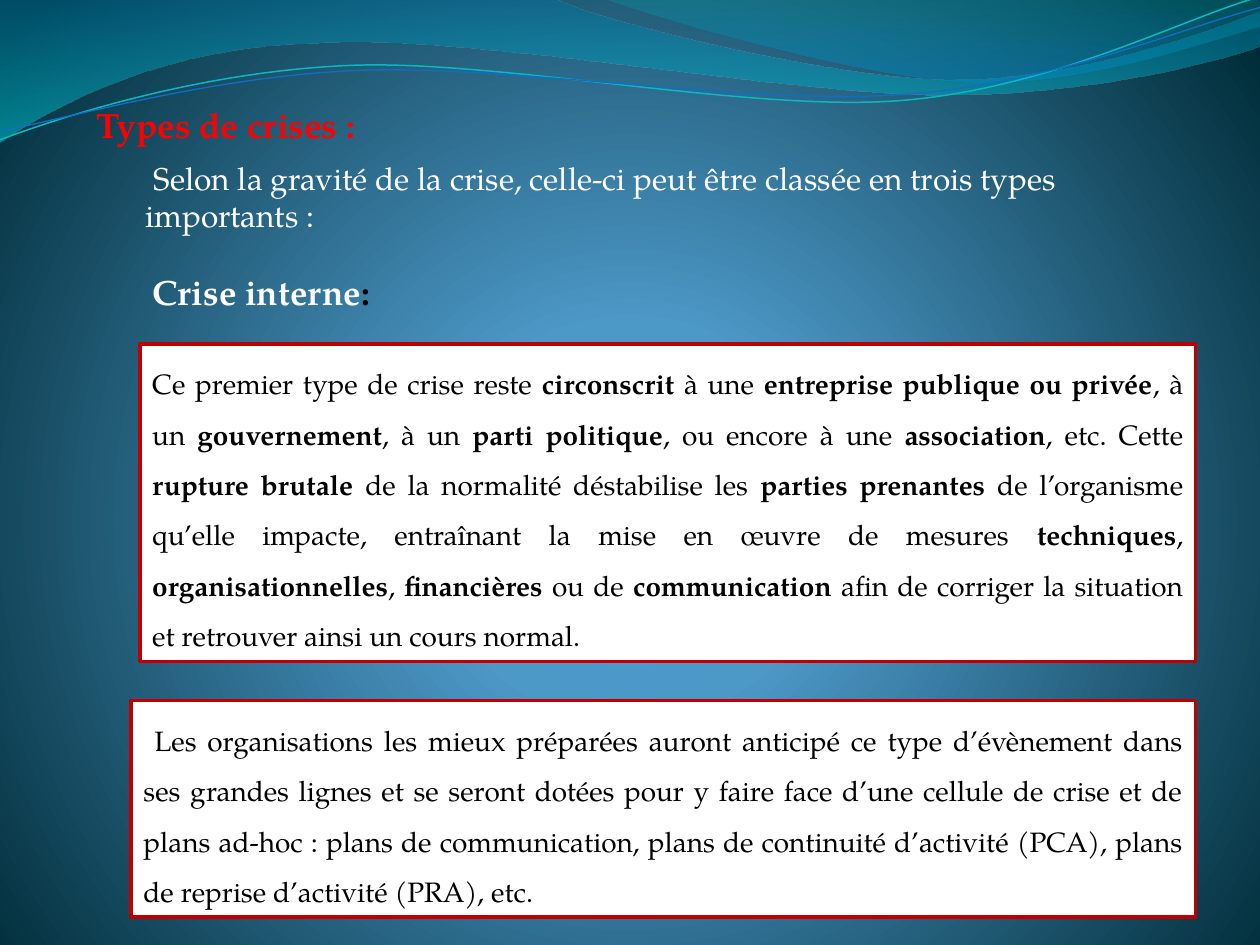
from dataclasses import dataclass
from typing import Optional

from lxml import etree
from pptx import Presentation
from pptx.dml.color import RGBColor
from pptx.enum.shapes import MSO_SHAPE
from pptx.enum.text import MSO_ANCHOR, MSO_AUTO_SIZE, PP_ALIGN
from pptx.oxml.ns import qn
from pptx.util import Inches, Pt

RECTANGLE = MSO_SHAPE.RECTANGLE
TOP = MSO_ANCHOR.TOP
JUSTIFY = PP_ALIGN.JUSTIFY
LEFT = PP_ALIGN.LEFT
GROW = MSO_AUTO_SIZE.SHAPE_TO_FIT_TEXT
FONT = "TeX Gyre Pagella"
WHITE = RGBColor(0xFF, 0xFF, 0xFF)
BLACK = RGBColor(0, 0, 0)
RED = RGBColor(0xFF, 0, 0)
DARK_RED = RGBColor(0xC0, 0, 0)
TURQUOISE = RGBColor(0x0A, 0xB8, 0xBF)
BLUE = RGBColor(0x0F, 0x6F, 0xC6)
SKY = RGBColor(0x4A, 0xA0, 0xD6)
STEEL = RGBColor(0x4C, 0x98, 0xC7)
NIGHT = RGBColor(0x00, 0x2C, 0x38)
OCEAN = RGBColor(0x00, 0x74, 0xA1)
AQUA = RGBColor(0x00, 0xC6, 0xCF)
TEAL = RGBColor(0x00, 0xA1, 0xA9)
AZURE = RGBColor(0x00, 0x8B, 0xBF)


@dataclass(frozen=True)
class Stop:
    position: int
    color: RGBColor
    opacity: int = 100


@dataclass(frozen=True)
class Wave:
    """Segments hold two numbers for a straight line and six for a curve."""
    start: tuple
    segments: tuple
    stops: tuple = ()
    color: Optional[RGBColor] = None
    width: float = 0


@dataclass(frozen=True)
class Passage:
    """Text in which double asterisks switch bold on and off."""
    box: tuple
    text: str
    size: int
    color: RGBColor
    framed: bool = False
    ending: str = ""


WAVES = (
    Wave((0, 0), ((4.4, -0.01), (4.76, 0.17, 6.64, 0.63, 7.58, 0.63),
                  (8.53, 0.63, 9.58, 0.26, 10, 0.09), (10.01, 0.36),
                  (9.83, 0.44, 8.7, 0.76, 7.46, 0.75), (6.22, 0.75, 3.82, 0.28, 2.57, 0.34),
                  (1.29, 0.36, 0.46, 0.83, -0.01, 1.13), (0, 0)),
         stops=(Stop(0, OCEAN, 45), Stop(100, AQUA, 55))),
    Wave((4.79, -0.01), ((5.09, 0.11, 6.82, 0.62, 7.69, 0.65),
                         (8.56, 0.69, 9.61, 0.32, 10, 0.21), (10, 0), (4.79, -0.01)),
         stops=(Stop(0, TEAL, 30), Stop(80, AZURE, 45))),
    Wave((0, 1.11), ((0.48, 0.93, 1.58, 0.57, 2.77, 0.52), (3.95, 0.47, 5.93, 0.89, 7.13, 0.8),
                     (8.33, 0.71, 9.38, 0.15, 9.98, -0.02)), color=TURQUOISE, width=0.85),
    Wave((0, 1.04), ((0.47, 0.96, 1.64, 0.61, 2.83, 0.56), (4.03, 0.51, 5.97, 0.84, 7.17, 0.75),
                     (8.36, 0.67, 9.41, 0.21, 10, 0.06)), color=BLUE, width=0.75),
)

PASSAGES = (
    Passage((1.11, 2.73, 8.38, 2.52),
            "Ce premier type de crise reste **circonscrit **à une **entreprise publique ou privée**"
            ", à un **gouvernement**, à un **parti politique**, ou encore à une **association**"
            ", etc. Cette **rupture brutale **de la normalité déstabilise les **parties prenantes **"
            "de l’organisme qu’elle impacte, entraînant la mise en œuvre de mesures **techniques**"
            ", **organisationnelles**, **financières **ou de **communication **"
            "afin de corriger la situation et retrouver ainsi un cours normal. ",
            16, BLACK, framed=True),
    Passage((1.04, 2.1, 6.97, 0.44), " **Crise interne", 20, WHITE, ending=":"),
    Passage((0.67, 0.77, 4.2, 0.44), "**Types de crises :", 20, RED),
    Passage((1.06, 1.21, 8.27, 0.71),
            " Selon la gravité de la crise, celle-ci peut être classée en trois types importants :",
            18, WHITE),
    Passage((1.04, 5.56, 8.45, 1.72),
            " Les organisations les mieux préparées auront anticipé ce type d’évènement dans ses "
            "grandes lignes et se seront dotées pour y faire face d’une cellule de crise et de plans "
            "ad-hoc : plans de communication, plans de continuité d’activité (PCA), plans de reprise "
            "d’activité (PRA), etc. ", 16, BLACK, framed=True),
)


def set_gradient(owner, stops: tuple, radial: bool = False) -> None:
    """Rewrite the gradient fill found inside an XML element."""
    gradient = owner.find(".//" + qn("a:gradFill"))
    for child in list(gradient):
        gradient.remove(child)
    stop_list = etree.SubElement(gradient, qn("a:gsLst"))
    for stop in stops:
        mark = etree.SubElement(stop_list, qn("a:gs"), pos=str(stop.position * 1000))
        color = etree.SubElement(mark, qn("a:srgbClr"), val=str(stop.color))
        if stop.opacity < 100:
            etree.SubElement(color, qn("a:alpha"), val=str(stop.opacity * 1000))
    if radial:
        circle = etree.SubElement(gradient, qn("a:path"), path="circle")
        etree.SubElement(circle, qn("a:fillToRect"), l="10000", t="110000", r="10000", b="100000")
    else:
        etree.SubElement(gradient, qn("a:lin"), ang="5400000", scaled="1")


def bend(ribbon, segments: tuple) -> None:
    """Turn the straight steps of a freeform into Bézier curves where six numbers are given."""
    steps = list(ribbon.element.iter(qn("a:lnTo")))
    for step, segment in zip(steps, segments):
        if len(segment) == 2:
            continue
        curve = etree.Element(qn("a:cubicBezTo"))
        for x, y in zip(segment[::2], segment[1::2]):
            etree.SubElement(curve, qn("a:pt"), x=str(Inches(x) - ribbon.left),
                             y=str(Inches(y) - ribbon.top))
        step.getparent().replace(step, curve)


def draw_wave(slide, wave: Wave) -> None:
    """Draw a filled wave or an open wavy line."""
    builder = slide.shapes.build_freeform(*(Inches(length) for length in wave.start))
    ends = [(Inches(segment[-2]), Inches(segment[-1])) for segment in wave.segments]
    builder.add_line_segments(ends, close=bool(wave.stops))
    ribbon = builder.convert_to_shape()
    bend(ribbon, wave.segments)
    ribbon.shadow.inherit = False
    if wave.stops:
        ribbon.fill.gradient()
        set_gradient(ribbon.element.spPr, wave.stops)
        ribbon.line.fill.background()
    else:
        ribbon.fill.background()
        ribbon.line.color.rgb = wave.color
        ribbon.line.width = Pt(wave.width)


def add_run(paragraph, text: str, size: int, color: RGBColor, bold: bool) -> None:
    """Append a formatted run."""
    run = paragraph.add_run()
    run.text = text
    for name, value in {"name": FONT, "size": Pt(size), "bold": bold}.items():
        setattr(run.font, name, value)
    run.font.color.rgb = color


def draw_passage(slide, passage: Passage) -> None:
    """Draw a heading or a framed paragraph."""
    place = [Inches(length) for length in passage.box]
    if passage.framed:
        holder = slide.shapes.add_shape(RECTANGLE, *place)
        holder.shadow.inherit = False
        holder.fill.solid()
        holder.fill.fore_color.rgb = WHITE
        holder.line.color.rgb = DARK_RED
        holder.line.width = Pt(2)
    else:
        holder = slide.shapes.add_textbox(*place)
    frame_format = {"word_wrap": True, "auto_size": GROW, "vertical_anchor": TOP}
    for name, value in frame_format.items():
        setattr(holder.text_frame, name, value)
    paragraph = holder.text_frame.paragraphs[0]
    layout = {"alignment": JUSTIFY, "line_spacing": 1.5} if passage.framed else {"alignment": LEFT}
    for name, value in layout.items():
        setattr(paragraph, name, value)
    for index, part in enumerate(passage.text.split("**")):
        if part:
            add_run(paragraph, part, passage.size, passage.color, index % 2 == 1)
    if passage.ending:
        add_run(paragraph, passage.ending, passage.size, BLACK, True)


def main() -> None:
    """Build the slide on types of crises."""
    deck = Presentation()
    deck.slide_width, deck.slide_height = Inches(10), Inches(7.5)
    slide = deck.slides.add_slide(deck.slide_layouts[6])
    slide.background.fill.gradient()
    set_gradient(slide.element, (Stop(0, SKY), Stop(25, STEEL), Stop(100, NIGHT)), radial=True)
    for wave in WAVES:
        draw_wave(slide, wave)
    for passage in PASSAGES:
        draw_passage(slide, passage)
    deck.save("out.pptx")


if __name__ == "__main__":
    main()
